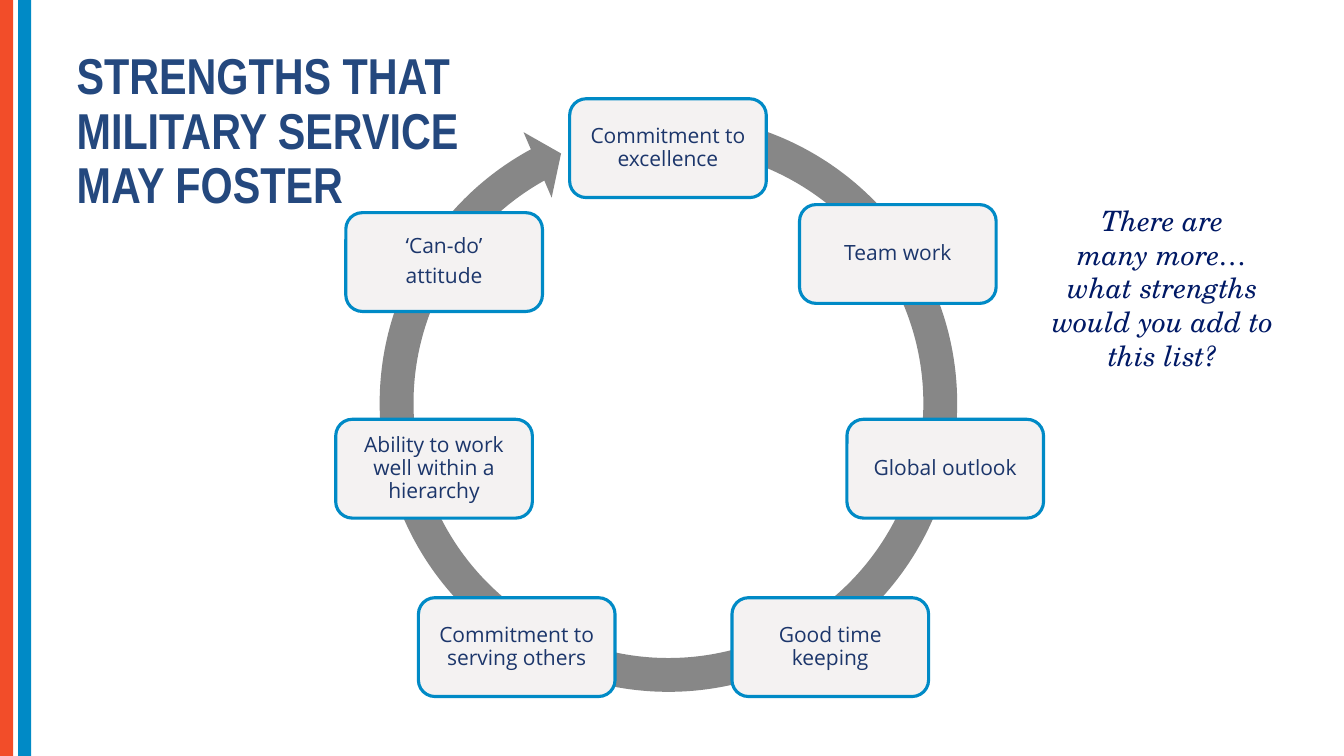
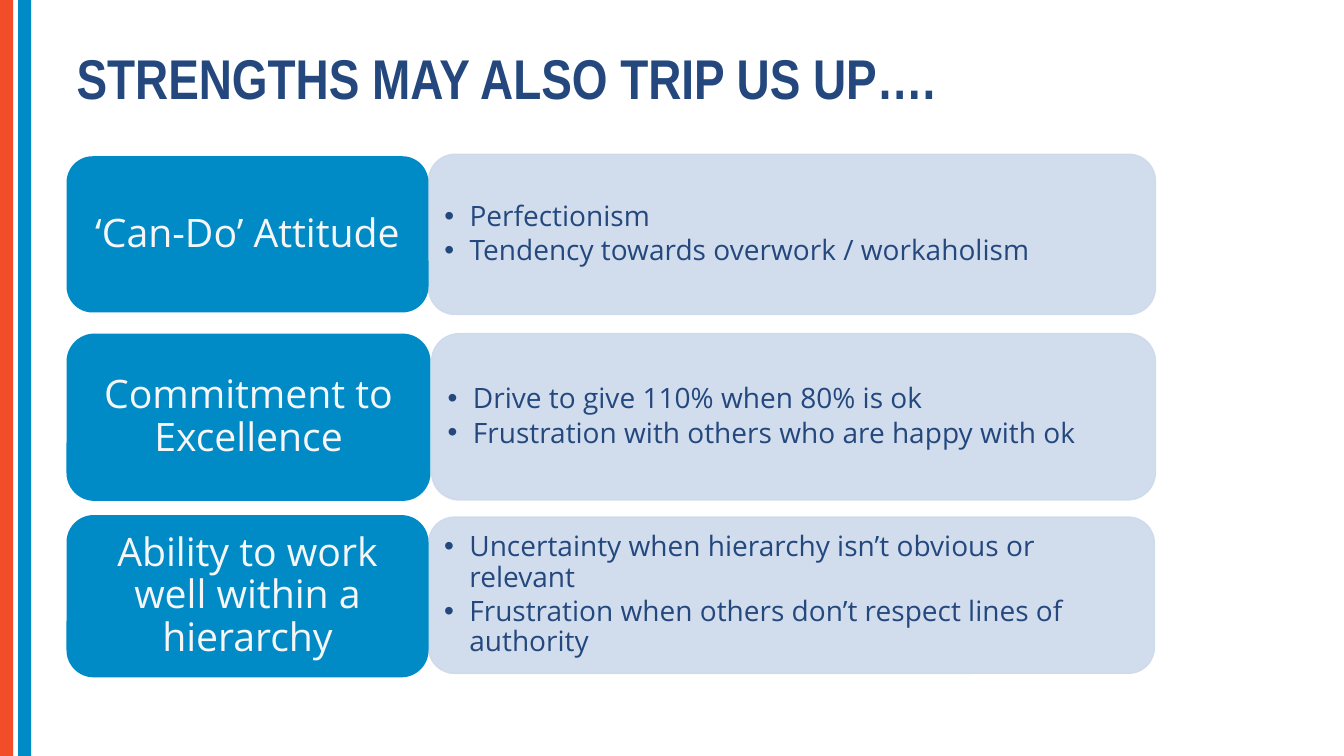
from dataclasses import dataclass

from lxml.etree import SubElement
from pptx import Presentation
from pptx.dml.color import RGBColor
from pptx.enum.shapes import MSO_SHAPE
from pptx.enum.text import MSO_ANCHOR, MSO_AUTO_SIZE, PP_ALIGN
from pptx.oxml.ns import qn
from pptx.shapes.autoshape import Shape
from pptx.slide import Slide
from pptx.text.text import TextFrame
from pptx.util import Pt

EMU_PER_PX = 9144


def px(length: int) -> int:
    return length * EMU_PER_PX


@dataclass(frozen=True)
class TextStyle:
    font: str
    size: int
    color: str
    bold: bool = False
    italic: bool = False
    align: PP_ALIGN = PP_ALIGN.CENTER
    line_spacing: float = 0.9
    gap_ratio: float = 0.0
    bulleted: bool = False


@dataclass(frozen=True)
class Theme:
    orange: str = "F24D29"
    blue: str = "008AC6"
    ring: str = "878787"
    card: str = "F4F2F2"
    panel: str = "CCDAEA"
    panel_opacity: int = 90
    card_border: float = 2.25
    panel_border: float = 1
    long_title: TextStyle = TextStyle("Arial Narrow", 36, "24487E", bold=True, align=PP_ALIGN.LEFT)
    title: TextStyle = TextStyle("Arial Narrow", 40, "24487E", bold=True, align=PP_ALIGN.LEFT)
    card_text: TextStyle = TextStyle("Open Sans", 15, "1C366B", gap_ratio=0.35)
    label: TextStyle = TextStyle("Open Sans", 28, "F6F6F6", gap_ratio=0.35)
    pitfall: TextStyle = TextStyle(
        "Open Sans", 20, "24487E", align=PP_ALIGN.LEFT, gap_ratio=0.15, bulleted=True
    )
    question: TextStyle = TextStyle("TeX Gyre Schola", 20, "001965", italic=True, line_spacing=1.0)


THEME = Theme()


@dataclass(frozen=True)
class Box:
    left: int
    top: int
    width: int
    height: int

    def emu(self) -> tuple[int, int, int, int]:
        return px(self.left), px(self.top), px(self.width), px(self.height)


@dataclass(frozen=True)
class Strength:
    text: str
    left: int
    top: int


@dataclass(frozen=True)
class TripUp:
    strength: str
    pitfalls: str
    label_box: Box
    panel_box: Box


SLIDE_WIDTH, SLIDE_HEIGHT = 1333, 750
BAND_WIDTH = 13
BANDS = ((0, THEME.orange), (18, THEME.blue))
TITLE_BOX = Box(66, 46, 987, 52)
RING_BOX = Box(358, 95, 610, 610)
RING_ADJUSTMENTS = (0.055, 3.307, 144.739, 169.742, 0.058)
CARD_WIDTH, CARD_HEIGHT = 195, 98
QUESTION_BOX = Box(1032, 197, 242, 178)
BULLET_INDENT = 25

STRENGTHS = (
    Strength("Commitment to excellence", 565, 98),
    Strength("Team work", 793, 203),
    Strength("Global outlook", 840, 416),
    Strength("Good time keeping", 726, 593),
    Strength("Commitment to serving others", 415, 593),
    Strength("Ability to work well within a hierarchy", 333, 416),
    Strength("‘Can-do’\nattitude", 343, 211),
)

TRIP_UPS = (
    TripUp(
        "‘Can-Do’ Attitude",
        "Perfectionism\nTendency towards overwork / workaholism",
        Box(66, 155, 359, 155),
        Box(425, 153, 721, 159),
    ),
    TripUp(
        "Commitment to Excellence",
        "Drive to give 110% when 80% is ok\nFrustration with others who are happy with ok",
        Box(66, 331, 361, 166),
        Box(428, 331, 718, 165),
    ),
    TripUp(
        "Ability to work well within a hierarchy",
        "Uncertainty when hierarchy isn’t obvious or relevant\n"
        "Frustration when others don’t respect lines of authority",
        Box(66, 511, 359, 161),
        Box(425, 513, 720, 155),
    ),
)


def write(
    frame: TextFrame,
    text: str,
    style: TextStyle,
    anchor: MSO_ANCHOR = MSO_ANCHOR.MIDDLE,
    insets: tuple[int, int] = (10, 5),
) -> None:
    frame.text = text
    frame.word_wrap = True
    frame.auto_size = MSO_AUTO_SIZE.NONE
    frame.vertical_anchor = anchor
    frame.margin_left = frame.margin_right = px(insets[0])
    frame.margin_top = frame.margin_bottom = px(insets[1])
    for paragraph in frame.paragraphs:
        paragraph.alignment = style.align
        paragraph.line_spacing = style.line_spacing
        paragraph.space_before = Pt(0)
        paragraph.space_after = Pt(style.size * style.gap_ratio)
        if style.bulleted:
            properties = paragraph._p.get_or_add_pPr()
            properties.set("marL", str(px(BULLET_INDENT)))
            properties.set("indent", str(-px(BULLET_INDENT)))
            SubElement(properties, qn("a:buFont")).set("typeface", "Arial")
            SubElement(properties, qn("a:buChar")).set("char", "•")
        for run in paragraph.runs:
            run.font.name = style.font
            run.font.size = Pt(style.size)
            run.font.bold = style.bold
            run.font.italic = style.italic
            run.font.color.rgb = RGBColor.from_string(style.color)


def add_filled(
    slide: Slide, kind: MSO_SHAPE, box: Box, fill: str, border: str = "", border_width: float = 0
) -> Shape:
    shape = slide.shapes.add_shape(kind, *box.emu())
    shape.shadow.inherit = False
    shape.fill.solid()
    shape.fill.fore_color.rgb = RGBColor.from_string(fill)
    if border:
        shape.line.color.rgb = RGBColor.from_string(border)
        shape.line.width = Pt(border_width)
    else:
        shape.line.fill.background()
    return shape


def set_opacity(shape: Shape, percent: int) -> None:
    for color in shape.element.spPr.iter(qn("a:srgbClr")):
        SubElement(color, qn("a:alpha")).set("val", str(percent * 1000))


def add_titled_slide(deck: Presentation, title: str, style: TextStyle) -> Slide:
    slide = deck.slides.add_slide(deck.slide_layouts[5])
    for left, color in BANDS:
        add_filled(slide, MSO_SHAPE.RECTANGLE, Box(left, 0, BAND_WIDTH, SLIDE_HEIGHT), color)
    heading = slide.shapes.title
    heading.left, heading.top, heading.width, heading.height = TITLE_BOX.emu()
    write(heading.text_frame, title, style, MSO_ANCHOR.TOP)
    return slide


def build_strengths(deck: Presentation) -> None:
    slide = add_titled_slide(
        deck, "STRENGTHS THAT\vMILITARY SERVICE\vMAY FOSTER", THEME.long_title
    )
    ring = add_filled(slide, MSO_SHAPE.CIRCULAR_ARROW, RING_BOX, THEME.ring)
    for index, value in enumerate(RING_ADJUSTMENTS):
        ring.adjustments[index] = value
    for strength in STRENGTHS:
        card = add_filled(
            slide,
            MSO_SHAPE.ROUNDED_RECTANGLE,
            Box(strength.left, strength.top, CARD_WIDTH, CARD_HEIGHT),
            THEME.card,
            THEME.blue,
            THEME.card_border,
        )
        write(card.text_frame, strength.text, THEME.card_text, insets=(6, 6))
    question = slide.shapes.add_textbox(*QUESTION_BOX.emu())
    write(
        question.text_frame,
        "There are\vmany more…\nwhat strengths would you add to this list?",
        THEME.question,
        MSO_ANCHOR.TOP,
    )


def build_trip_ups(deck: Presentation) -> None:
    slide = add_titled_slide(deck, "STRENGTHS MAY ALSO TRIP US UP….", THEME.title)
    for trip_up in TRIP_UPS:
        panel = add_filled(
            slide,
            MSO_SHAPE.ROUNDED_RECTANGLE,
            trip_up.panel_box,
            THEME.panel,
            THEME.panel,
            THEME.panel_border,
        )
        set_opacity(panel, THEME.panel_opacity)
        write(panel.text_frame, trip_up.pitfalls, THEME.pitfall, insets=(8, 4))
        label = add_filled(slide, MSO_SHAPE.ROUNDED_RECTANGLE, trip_up.label_box, THEME.blue)
        write(label.text_frame, trip_up.strength, THEME.label, insets=(12, 6))


def main() -> None:
    deck = Presentation()
    deck.slide_width, deck.slide_height = px(SLIDE_WIDTH), px(SLIDE_HEIGHT)
    build_strengths(deck)
    build_trip_ups(deck)
    deck.save("out.pptx")


if __name__ == "__main__":
    main()
